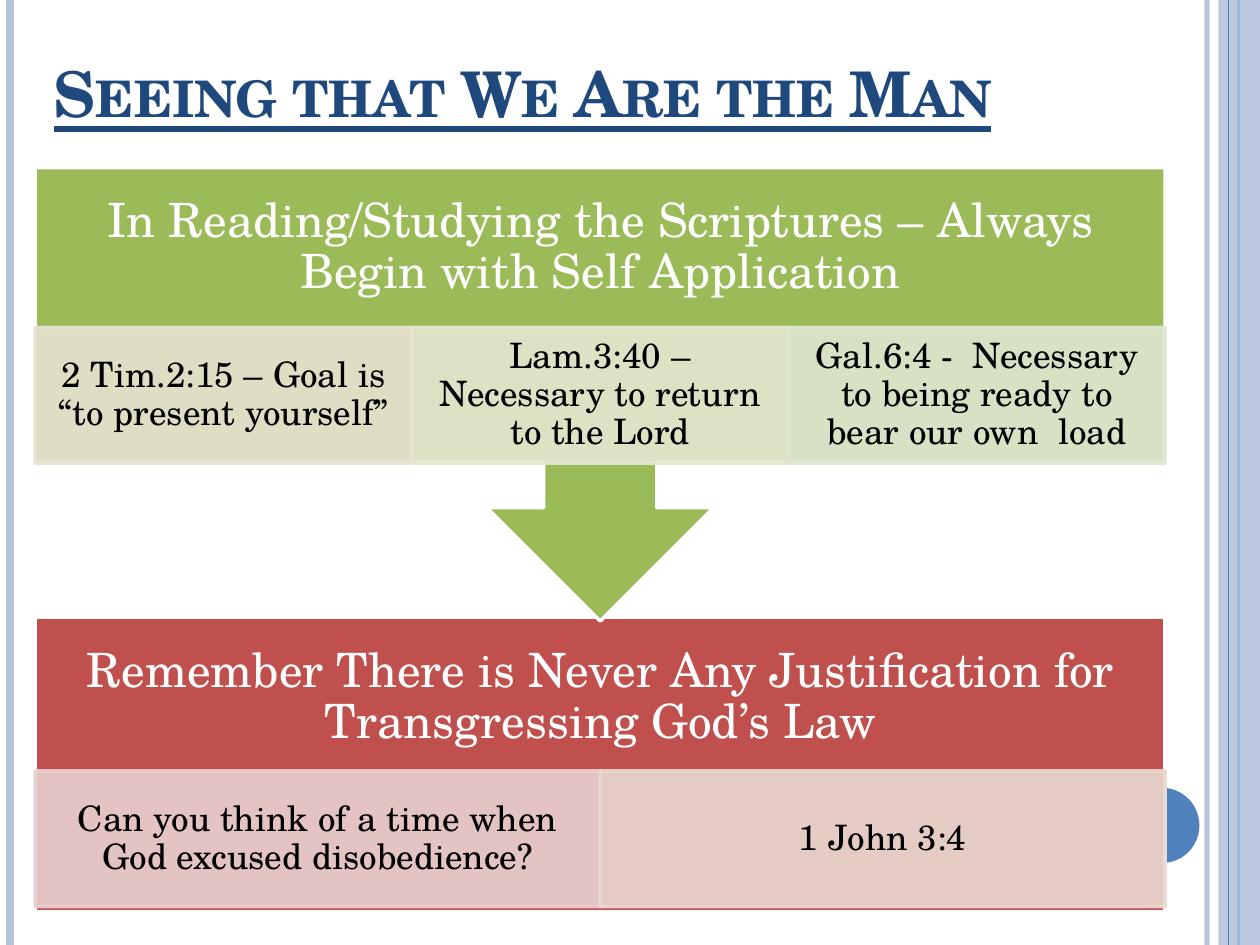
from lxml import etree
from pptx import Presentation
from pptx.dml.color import RGBColor
from pptx.enum.shapes import MSO_CONNECTOR, MSO_SHAPE
from pptx.enum.text import MSO_ANCHOR, PP_ALIGN
from pptx.oxml.ns import qn
from pptx.util import Cm, Pt

STRAIGHT = MSO_CONNECTOR.STRAIGHT
RECTANGLE, OVAL = MSO_SHAPE.RECTANGLE, MSO_SHAPE.OVAL
CALLOUT = MSO_SHAPE.UP_ARROW_CALLOUT
MIDDLE, BOTTOM = MSO_ANCHOR.MIDDLE, MSO_ANCHOR.BOTTOM
LEFT, CENTER = PP_ALIGN.LEFT, PP_ALIGN.CENTER

FONT = "TeX Gyre Schola"
WHITE, BLACK, NAVY = "FFFFFF", "000000", "1F497D"
BLUE, PALE_BLUE = "4F81BD", "B3C1DB"
GREEN, RED = "9BBB59", "C0504D"
SLIDE_WIDTH, SLIDE_HEIGHT = 25.4, 19.05
BLOCK_LEFT, BLOCK_WIDTH = 0.71, 22.78
HEADER_HEIGHT, TILE_HEIGHT = 3.23, 2.74


def set_color(color_format, color, alpha=100):
    """Apply a hex colour and an opacity in percent."""
    color_format.rgb = RGBColor.from_string(color)
    if alpha < 100:
        node = color_format._xFill.find(qn("a:srgbClr"))
        etree.SubElement(node, qn("a:alpha")).set("val", str(alpha * 1000))


def format_text(frame, size, color, alignment, anchor):
    """Style the only paragraph of a text frame."""
    frame.word_wrap = True
    frame.vertical_anchor = anchor
    para = frame.paragraphs[0]
    para.alignment = alignment
    font = para.runs[0].font
    font.name, font.size = FONT, Pt(size)
    set_color(font.color, color)
    return font


def add_block_text(frame, text, size, color, side, edge):
    """Write centred text with the given side and edge margins."""
    frame.text = text
    frame.margin_left = frame.margin_right = Cm(side)
    frame.margin_top = frame.margin_bottom = Cm(edge)
    format_text(frame, size, color, CENTER, MIDDLE)
    frame.paragraphs[0].line_spacing = 0.9


def add_shape(slide, kind, left, top, width, height, color, alpha=100, line=None):
    """Add a flat filled shape with an optional outline."""
    shape = slide.shapes.add_shape(kind, Cm(left), Cm(top), Cm(width), Cm(height))
    shape.shadow.inherit = False
    shape.fill.solid()
    set_color(shape.fill.fore_color, color, alpha)
    if line:
        shape.line.fill.solid()
        set_color(shape.line.color, line, alpha)
        shape.line.width = Pt(2)
    else:
        shape.line.fill.background()
    return shape


def add_stripe(slide, left, color, width, alpha=100):
    """Add a vertical line over the whole slide height."""
    stripe = slide.shapes.add_connector(
        STRAIGHT, Cm(left), Cm(0), Cm(left), Cm(SLIDE_HEIGHT))
    stripe.line.fill.solid()
    set_color(stripe.line.color, color, alpha)
    stripe.line.width = Pt(width)
    etree.SubElement(stripe._element.spPr, qn("a:effectLst"))


def add_frame(slide):
    """Draw the stripes and the dot along the slide edges."""
    add_stripe(slide, 24.33, PALE_BLUE, 3, 93)
    add_stripe(slide, 0.2, PALE_BLUE, 4.5)
    add_stripe(slide, 24.97, BLUE, 1.5)
    add_shape(slide, RECTANGLE, 24.56, 0, 0.84, SLIDE_HEIGHT, PALE_BLUE, 87)
    add_stripe(slide, 24.77, BLUE, 0.75)
    add_shape(slide, OVAL, 22.66, 15.88, 1.52, 1.52, BLUE)


def add_title(slide, text):
    """Place and format the title placeholder."""
    title = slide.shapes.title
    title.left, title.top = Cm(0.83), Cm(-0.43)
    title.width, title.height = Cm(20.75), Cm(3.18)
    title.text_frame.text = text
    font = format_text(title.text_frame, 36, NAVY, LEFT, BOTTOM)
    font.bold = font.underline = True
    font._element.set("cap", "small")


def add_block(slide, kind, top, height, color, heading, tile_top, tiles):
    """Add a coloured block with its heading and a row of equal tiles."""
    body = add_shape(slide, kind, BLOCK_LEFT, top, BLOCK_WIDTH, height, color, line=WHITE)
    if kind == CALLOUT:
        body.rotation = 180
    box = slide.shapes.add_textbox(
        Cm(BLOCK_LEFT), Cm(top), Cm(BLOCK_WIDTH), Cm(HEADER_HEIGHT))
    add_block_text(box.text_frame, heading, 27, WHITE, 0.53, 0.53)
    tile_width = BLOCK_WIDTH / len(tiles)
    for index, (text, tile_color) in enumerate(tiles):
        tile = add_shape(slide, RECTANGLE, BLOCK_LEFT + index * tile_width, tile_top,
                         tile_width, TILE_HEIGHT, tile_color, 90, tile_color)
        add_block_text(tile.text_frame, text, 20, BLACK, 0.41, 0.08)


def main():
    """Build the slide and save the deck."""
    deck = Presentation()
    deck.slide_width, deck.slide_height = Cm(SLIDE_WIDTH), Cm(SLIDE_HEIGHT)
    slide = deck.slides.add_slide(deck.slide_layouts[5])
    add_frame(slide)
    add_title(slide, "Seeing that We Are the Man")
    add_block(
        slide, RECTANGLE, 12.45, 5.94, RED,
        "Remember There is Never Any Justification for Transgressing God’s Law", 15.54,
        [("Can you think of a time when God excused disobedience?", "E8D0D0"),
         ("1 John 3:4", "E8D9D0")])
    add_block(
        slide, CALLOUT, 3.38, 9.14, GREEN,
        "In Reading/Studying the Scriptures – Always Begin with Self Application", 6.6,
        [("2 Tim.2:15 – Goal is “to present yourself”", "E8E1D1"),
         ("Lam.3:40 – Necessary to return to the Lord", "E6E7D1"),
         ("Gal.6:4 -  Necessary to being ready to bear our own  load", "DEE7D1")])
    deck.save("out.pptx")


if __name__ == "__main__":
    main()
